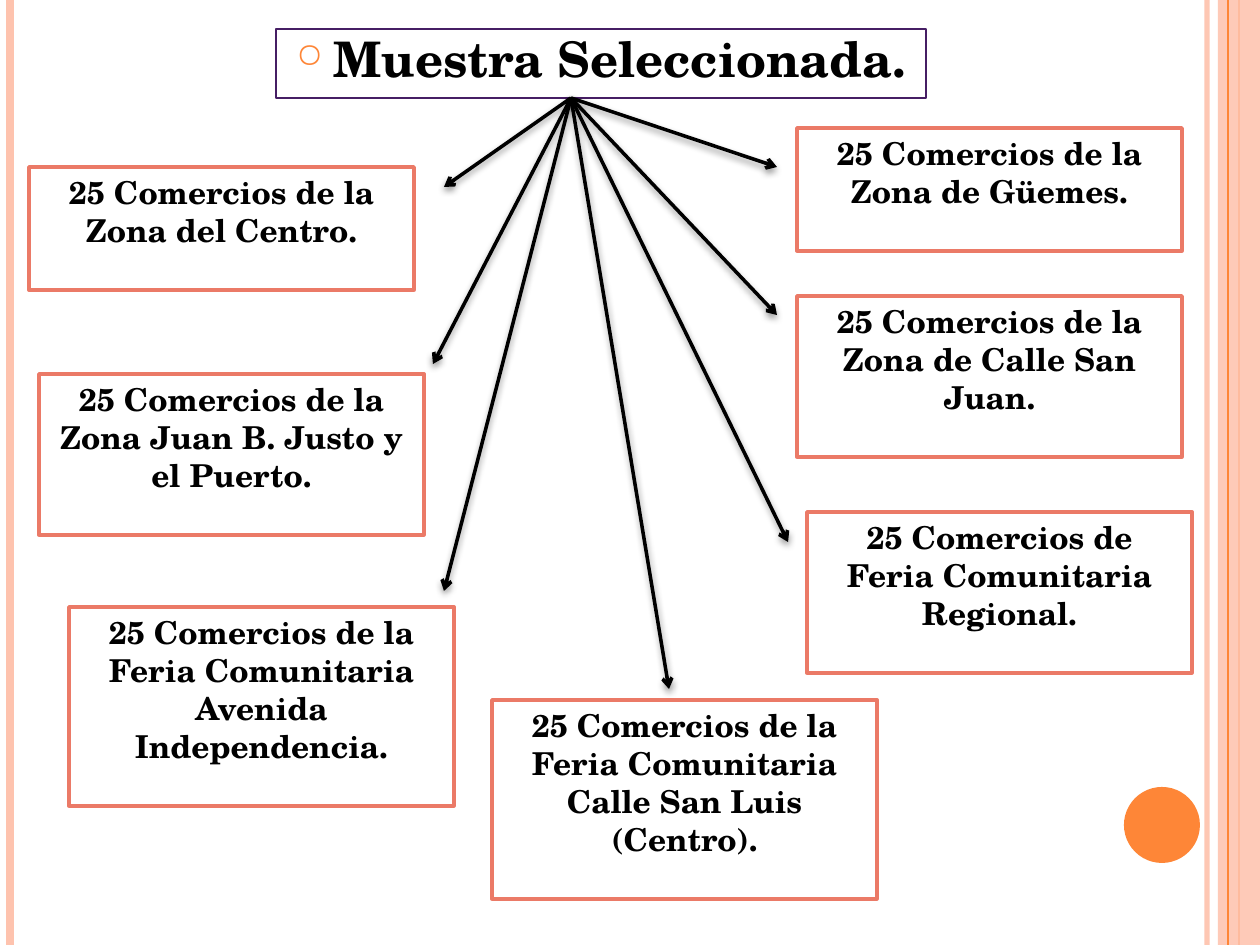
from dataclasses import dataclass

from lxml import etree
from pptx import Presentation
from pptx import util as u
from pptx.dml.color import RGBColor
from pptx.enum import shapes, text
from pptx.oxml.ns import qn

PX = 914400 / 126
WIDTH, HEIGHT = 1260, 945
FONT = "TeX Gyre Schola"
BLACK = RGBColor(0x00, 0x00, 0x00)
WHITE = RGBColor(0xFF, 0xFF, 0xFF)
PEACH = RGBColor(0xFE, 0xC3, 0xAE)
ORANGE = RGBColor(0xFE, 0x86, 0x37)
CORAL = RGBColor(0xEB, 0x7A, 0x67)
PURPLE = RGBColor(0x46, 0x1E, 0x64)

BOX_WIDTH = 385
LINE_HEIGHT = 38
BOX_PADDING = 47
ARROW_START = (571, 98)


@dataclass(frozen=True)
class Rule:
    x: int
    weight: float
    color: RGBColor
    opacity: int = 100


@dataclass(frozen=True)
class Sample:
    label: str
    left: int
    top: int
    lines: int
    arrow_end: tuple[int, int]


EDGE_RULES = [
    Rule(1207, 3, PEACH, 93),
    Rule(10, 4.5, PEACH),
    Rule(1239, 1.5, ORANGE),
    Rule(1228, 0.75, ORANGE),
]

SAMPLES = [
    Sample("25 Comercios de la Zona del Centro.", 29, 167, 2, (444, 187)),
    Sample("25 Comercios de la Zona Juan B. Justo y el Puerto.", 39, 374, 3, (433, 364)),
    Sample("25 Comercios de la Feria Comunitaria Avenida Independencia.",
           69, 607, 4, (444, 591)),
    Sample("25 Comercios de la Feria Comunitaria Calle San Luis (Centro).",
           492, 700, 4, (669, 689)),
    Sample("25 Comercios de Feria Comunitaria Regional.", 807, 512, 3, (788, 542)),
    Sample("25 Comercios de la Zona de Calle San Juan.", 797, 296, 3, (777, 315)),
    Sample("25 Comercios de la Zona de Güemes.", 797, 128, 2, (777, 167)),
]


def px(length: int) -> u.Emu:
    return u.Emu(round(length * PX))


def add_child(parent, tag: str, **attributes):
    return etree.SubElement(parent, qn(tag), attributes)


def set_opacity(shape, percent: int) -> None:
    color = next(shape._element.spPr.iter(qn("a:srgbClr")))
    add_child(color, "a:alpha", val=str(percent * 1000))


def add_line(slide, start, end, color: RGBColor, weight: float):
    line = slide.shapes.add_connector(
        shapes.MSO_CONNECTOR.STRAIGHT, *map(px, (*start, *end)))
    line.line.color.rgb = color
    line.line.width = u.Pt(weight)
    effects = add_child(line._element.spPr, "a:effectLst")
    return line, effects


def add_rule(slide, rule: Rule) -> None:
    line, _ = add_line(slide, (rule.x, 0), (rule.x, HEIGHT), rule.color, rule.weight)
    if rule.opacity < 100:
        set_opacity(line, rule.opacity)


def add_arrow(slide, end: tuple[int, int]) -> None:
    line, effects = add_line(slide, ARROW_START, end, BLACK, 2)
    add_child(line.line._get_or_add_ln(), "a:tailEnd", type="arrow")
    shadow = add_child(effects, "a:outerShdw", blurRad=str(u.Pt(4)), dist=str(u.Pt(2)),
                       dir="5400000", rotWithShape="0")
    color = add_child(shadow, "a:srgbClr", val=str(BLACK))
    add_child(color, "a:alpha", val="40000")


def add_solid(slide, kind, bounds, color: RGBColor):
    shape = slide.shapes.add_shape(kind, *map(px, bounds))
    shape.shadow.inherit = False
    shape.fill.solid()
    shape.fill.fore_color.rgb = color
    shape.line.fill.background()
    return shape


def write_bold(frame, words: str, size: int):
    frame.text = words
    frame.word_wrap = True
    para = frame.paragraphs[0]
    para.alignment = text.PP_ALIGN.CENTER
    font = para.runs[0].font
    font.name, font.size, font.bold = FONT, u.Pt(size), True
    font.color.rgb = BLACK
    return para


def add_sample(slide, sample: Sample) -> None:
    height = BOX_PADDING + sample.lines * LINE_HEIGHT
    box = add_solid(slide, shapes.MSO_SHAPE.RECTANGLE,
                    (sample.left, sample.top, BOX_WIDTH, height), WHITE)
    box.line.color.rgb = CORAL
    box.line.width = u.Pt(2)
    box.text_frame.vertical_anchor = text.MSO_ANCHOR.TOP
    write_bold(box.text_frame, sample.label, 18)


def format_title(title) -> None:
    title.left, title.top, title.width, title.height = map(px, (276, 29, 650, 69))
    title.line.color.rgb = PURPLE
    title.line.width = u.Pt(0.75)
    frame = title.text_frame
    frame.auto_size = text.MSO_AUTO_SIZE.NONE
    frame.vertical_anchor = text.MSO_ANCHOR.MIDDLE
    para = write_bold(frame, "Muestra Seleccionada.", 28)
    para.line_spacing = 0.8
    para.space_before = u.Pt(6)
    # Hanging ring bullet
    properties = para._p.get_or_add_pPr()
    properties.set("marL", str(u.Inches(0.3)))
    properties.set("indent", str(-u.Inches(0.3)))
    add_child(add_child(properties, "a:buClr"), "a:srgbClr", val=str(ORANGE))
    add_child(properties, "a:buSzPct", val="70000")
    add_child(properties, "a:buChar", char="○")


def main() -> None:
    deck = Presentation()
    deck.slide_width, deck.slide_height = px(WIDTH), px(HEIGHT)
    page = deck.slides.add_slide(deck.slide_layouts[5])

    # Side decoration
    for rule in EDGE_RULES[:-1]:
        add_rule(page, rule)
    band = add_solid(page, shapes.MSO_SHAPE.RECTANGLE, (1218, 0, 42, HEIGHT), PEACH)
    set_opacity(band, 87)
    add_rule(page, EDGE_RULES[-1])
    add_solid(page, shapes.MSO_SHAPE.OVAL, (1124, 787, 76, 76), ORANGE)

    # Title, sample boxes and the arrows that fan out to them
    format_title(page.shapes.title)
    for sample in SAMPLES:
        add_sample(page, sample)
        add_arrow(page, sample.arrow_end)

    deck.save("out.pptx")


if __name__ == "__main__":
    main()
